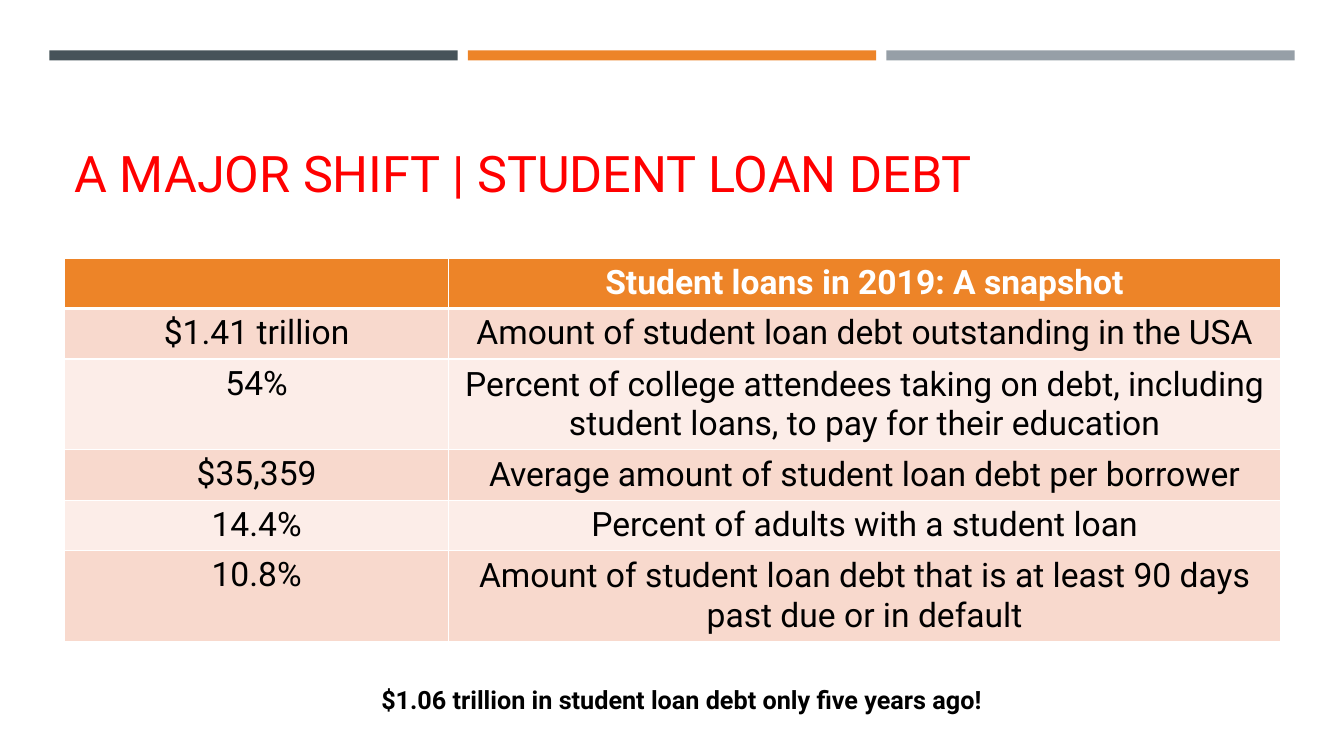
from dataclasses import dataclass

from lxml.etree import SubElement
from pptx import Presentation
from pptx.dml.color import RGBColor
from pptx.enum.shapes import MSO_SHAPE
from pptx.enum.text import MSO_ANCHOR, PP_ALIGN
from pptx.oxml.ns import qn
from pptx.util import Emu, Pt


@dataclass(frozen=True)
class Theme:
    font: str = "Roboto"
    slate: str = "465359"
    orange: str = "ED8428"
    gray: str = "969FA7"
    red: str = "FF0000"
    black: str = "000000"
    white: str = "FFFFFF"
    bands: tuple = ("F8D9CD", "FCEDE8")
    title: int = 36
    body: int = 24
    note: int = 18


THEME = Theme()
SCALE = 9144  # EMU per px, 100 px to the inch

ROWS = [
    ("", "Student loans in 2019: A snapshot"),
    ("$1.41 trillion", "Amount of student loan debt outstanding in the USA"),
    ("54%", "Percent of college attendees taking on debt, including "
            "student loans, to pay for their education"),
    ("$35,359", "Average amount of student loan debt per borrower"),
    ("14.4%", "Percent of adults with a student loan"),
    ("10.8%", "Amount of student loan debt that is at least 90 days "
              "past due or in default"),
]
COLS = (381, 825)
HEIGHTS = (49, 49, 88, 49, 49, 88)


def px(*vals):
    return [Emu(val * SCALE) for val in vals]


def apply(item, **form):
    for name, val in form.items():
        setattr(item, name, val)


def paint(fill, color):
    fill.solid()
    fill.fore_color.rgb = RGBColor.from_string(color)


def write(frame, text, size, color, bold=False, align=PP_ALIGN.CENTER, space=1.0):
    para = frame.paragraphs[0]
    apply(para, alignment=align, line_spacing=space)
    run = para.add_run()
    run.text = text
    apply(run.font, name=THEME.font, size=Pt(size), bold=bold)
    run.font.color.rgb = RGBColor.from_string(color)


def add_bar(slide, left, color):
    bar = slide.shapes.add_shape(MSO_SHAPE.RECTANGLE, *px(left, 50, 405, 10))
    bar.shadow.inherit = False
    paint(bar.fill, color)
    bar.line.fill.background()


def add_text(slide, box, text, size, color, anchor=MSO_ANCHOR.TOP, **form):
    frame = slide.shapes.add_textbox(*px(*box)).text_frame
    apply(frame, word_wrap=True, vertical_anchor=anchor)
    write(frame, text, size, color, **form)


def add_edge(cell, side, width):
    line = SubElement(cell._tc.get_or_add_tcPr(), qn(f"a:ln{side}"), w=str(Pt(width)))
    fill = SubElement(line, qn("a:solidFill"))
    SubElement(fill, qn("a:srgbClr"), val=THEME.white)


def fill_cell(cell, row, text):
    head = row == 0
    # A thick rule parts the header from the body
    widths = {"L": 1, "R": 1, "T": 3 if row == 1 else 1, "B": 3 if head else 1}
    for side, width in widths.items():
        add_edge(cell, side, width)
    paint(cell.fill, THEME.orange if head else THEME.bands[(row - 1) % 2])
    if text:
        write(cell.text_frame, text, THEME.body,
              THEME.white if head else THEME.black, bold=head)


def add_grid(slide, left, top):
    box = px(left, top, sum(COLS), sum(HEIGHTS))
    table = slide.shapes.add_table(len(ROWS), len(COLS), *box).table
    for col, width in zip(table.columns, px(*COLS)):
        col.width = width
    for row, height in zip(table.rows, px(*HEIGHTS)):
        row.height = height
    for r, texts in enumerate(ROWS):
        for c, text in enumerate(texts):
            cell = table.cell(r, c)
            fill_cell(cell, r, text)
            if r > 1 and c == 1:
                cell.vertical_anchor = MSO_ANCHOR.MIDDLE


def main():
    deck = Presentation()
    deck.slide_width, deck.slide_height = px(1333, 750)
    slide = deck.slides.add_slide(deck.slide_layouts[6])

    # Bars along the top
    for i, color in enumerate((THEME.slate, THEME.orange, THEME.gray)):
        add_bar(slide, 49 + 415 * i, color)

    # Title
    add_text(slide, (64, 77, 1206, 130), "A MAJOR SHIFT | STUDENT LOAN DEBT",
             THEME.title, THEME.red, MSO_ANCHOR.BOTTOM,
             align=PP_ALIGN.LEFT, space=0.9)

    # Loan figures
    add_grid(slide, 64, 256)

    # Closing note
    add_text(slide, (320, 674, 712, 40),
             "$1.06 trillion in student loan debt only five years ago!",
             THEME.note, THEME.black, bold=True)

    deck.save("out.pptx")


if __name__ == "__main__":
    main()
